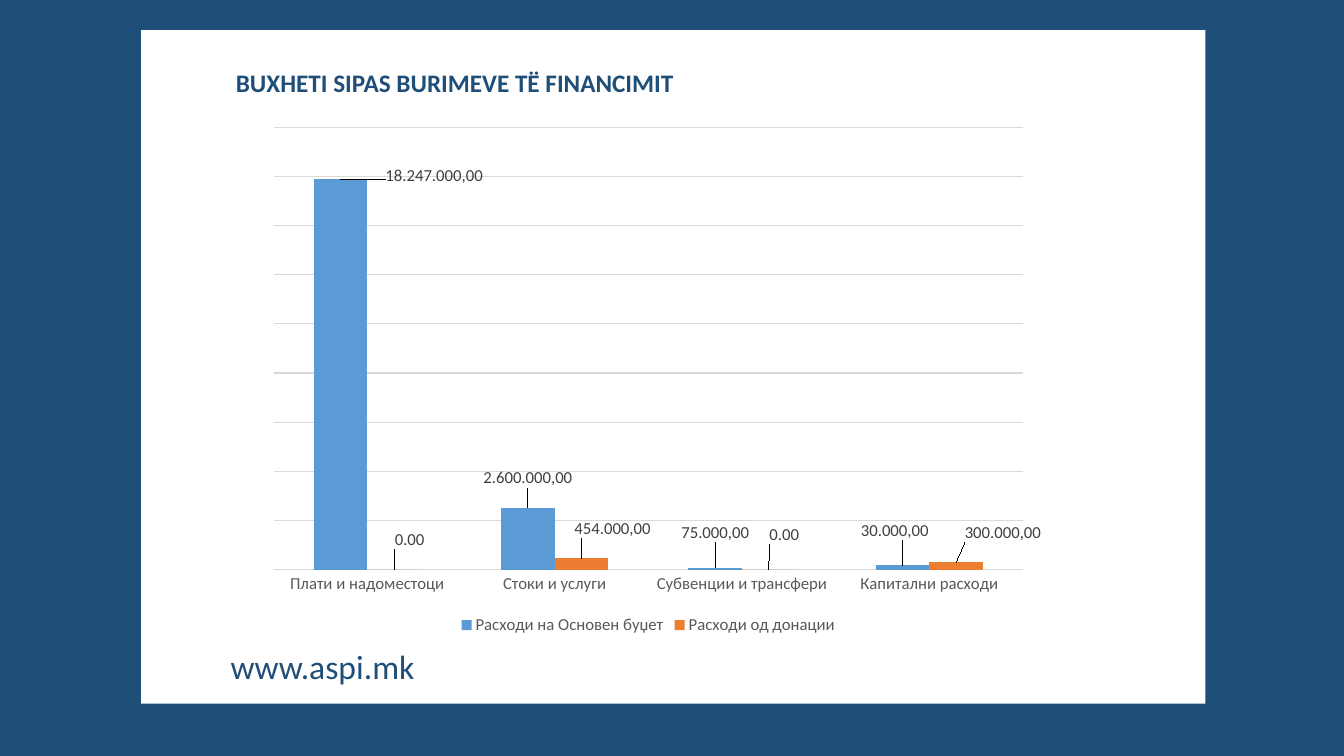
from dataclasses import dataclass

import lxml.etree
import pptx
import pptx.chart.data
import pptx.dml.color
import pptx.enum.chart
import pptx.enum.shapes
import pptx.enum.text
import pptx.oxml.ns
import pptx.util

Pt = pptx.util.Pt
qn = pptx.oxml.ns.qn
FONT = "Calibri"
NUMBER_FORMAT = "#,##0.00"
COLORS = {
    "navy": "1F4E79",
    "white": "FFFFFF",
    "blue": "5B9BD5",
    "orange": "ED7D31",
    "axis": "595959",
    "label": "404040",
    "grid": "D9D9D9",
    "black": "000000",
}


@dataclass
class Panel:
    left: float
    top: float
    width: float
    height: float
    color: str


@dataclass
class Label:
    text: str
    dx: float
    dy: float


@dataclass
class Source:
    name: str
    values: list[int]
    color: str
    labels: list[Label]


PANELS = [
    Panel(0, 0, 960, 540, "navy"),
    Panel(100.8, 21.6, 760.3, 481, "white"),
]
CATEGORIES = ["Плати и надоместоци", "Стоки и услуги",
              "Субвенции и трансфери", "Капитални расходи"]
SOURCES = [
    Source("Расходи на Основен буџет", [15884000, 2520000, 73000, 182000], "blue", [
        Label("18.247.000,00", 0.12, 0.02),
        Label("2.600.000,00", 0, -0.03),
        Label("75.000,00", 0, -0.04),
        Label("30.000,00", -0.01, -0.04),
    ]),
    Source("Расходи од донации", [0, 450000, 0, 297100], "orange", [
        Label("", 0.02, -0.03),
        Label("454.000,00", 0.04, -0.03),
        Label("", 0.02, -0.04),
        Label("300.000,00", 0.06, -0.03),
    ]),
]


def rgb(color: str) -> pptx.dml.color.RGBColor:
    return pptx.dml.color.RGBColor.from_string(COLORS[color])


def style_font(font, size: float, color: str, bold: bool = False) -> None:
    font.name = FONT
    font.size = Pt(size)
    font.bold = bold
    font.color.rgb = rgb(color)


def add_panel(s, panel: Panel) -> None:
    sp = s.shapes.add_shape(pptx.enum.shapes.MSO_SHAPE.RECTANGLE, Pt(panel.left),
                            Pt(panel.top), Pt(panel.width), Pt(panel.height))
    sp.shadow.inherit = False
    sp.fill.solid()
    sp.fill.fore_color.rgb = rgb(panel.color)
    sp.line.fill.background()


def write_line(sp, text: str, size: float, bold: bool = False) -> None:
    tf = sp.text_frame
    tf.text = text
    tf.word_wrap = False
    tf.auto_size = pptx.enum.text.MSO_AUTO_SIZE.SHAPE_TO_FIT_TEXT
    tf.vertical_anchor = pptx.enum.text.MSO_ANCHOR.TOP
    p = tf.paragraphs[0]
    p.alignment = pptx.enum.text.PP_ALIGN.LEFT
    style_font(p.runs[0].font, size, "navy", bold)


def make_layout(**settings: str | float):
    layout = lxml.etree.Element(qn("c:layout"))
    manual = lxml.etree.SubElement(layout, qn("c:manualLayout"))
    for tag, value in settings.items():
        lxml.etree.SubElement(manual, qn(f"c:{tag}")).set("val", str(value))
    return layout


def format_series(series, source: Source) -> None:
    series.format.fill.solid()
    series.format.fill.fore_color.rgb = rgb(source.color)
    series.invert_if_negative = False
    outside = pptx.enum.chart.XL_LABEL_POSITION.OUTSIDE_END
    labels = series.data_labels
    labels.show_value = True
    labels.number_format = NUMBER_FORMAT
    labels.number_format_is_linked = False
    labels.position = outside
    style_font(labels.font, 12, "label")
    for i, label in enumerate(source.labels):
        data_label = series.points[i].data_label
        data_label.position = outside
        if label.text:
            tf = data_label.text_frame
            tf.text = label.text
            style_font(tf.paragraphs[0].runs[0].font, 12, "label")
        else:
            style_font(data_label.font, 12, "label")
        idx = labels._element.findall(qn("c:dLbl"))[i].find(qn("c:idx"))
        idx.addnext(make_layout(x=label.dx, y=label.dy))


def add_budget_chart(s) -> None:
    data = pptx.chart.data.CategoryChartData(number_format=NUMBER_FORMAT)
    data.categories = CATEGORIES
    for source in SOURCES:
        data.add_series(source.name, source.values)
    chart = s.shapes.add_chart(pptx.enum.chart.XL_CHART_TYPE.COLUMN_CLUSTERED,
                               Pt(184.3), Pt(83.5), Pt(559.4), Pt(373), data).chart
    chart.has_title = False
    style_font(chart.font, 10, "black")
    chart.has_legend = True
    chart.legend.position = pptx.enum.chart.XL_LEGEND_POSITION.BOTTOM
    chart.legend.include_in_layout = False
    style_font(chart.legend.font, 12, "axis")

    category_axis = chart.category_axis
    category_axis.major_tick_mark = pptx.enum.chart.XL_TICK_MARK.NONE
    category_axis.format.line.fill.background()
    style_font(category_axis.tick_labels.font, 12, "axis")
    value_axis = chart.value_axis
    value_axis.visible = False
    value_axis.minimum_scale = 0
    value_axis.maximum_scale = 18000000
    value_axis.major_unit = 2000000
    value_axis.tick_labels.number_format = NUMBER_FORMAT
    value_axis.tick_labels.number_format_is_linked = False
    grid = value_axis.major_gridlines.format.line
    grid.width = Pt(0.75)
    grid.color.rgb = rgb("grid")

    plot = chart.plots[0]
    plot.gap_width = 150
    plot.overlap = 0
    plot.vary_by_categories = False
    plot_area = chart._chartSpace.chart.plotArea
    for old in plot_area.findall(qn("c:layout")):
        plot_area.remove(old)
    plot_area.insert(0, make_layout(layoutTarget="inner", xMode="edge", yMode="edge",
                                    x=0.02, y=0.02, w=0.96, h=0.847))
    for series, source in zip(plot.series, SOURCES):
        format_series(series, source)


def main() -> None:
    prs = pptx.Presentation()
    prs.slide_width, prs.slide_height = Pt(960), Pt(540)
    s = prs.slides.add_slide(prs.slide_layouts[5])
    for panel in PANELS:
        add_panel(s, panel)
    site = s.shapes.add_textbox(Pt(157.7), Pt(458), Pt(147), Pt(36))
    write_line(site, "www.aspi.mk", 24)
    title = s.shapes.title
    title.left, title.top, title.width, title.height = Pt(161.3), Pt(44.6), Pt(330.5), Pt(29)
    write_line(title, "BUXHETI SIPAS BURIMEVE TË FINANCIMIT", 18, bold=True)
    s.shapes._spTree.append(title._element)
    add_budget_chart(s)
    prs.save("out.pptx")


if __name__ == "__main__":
    main()
